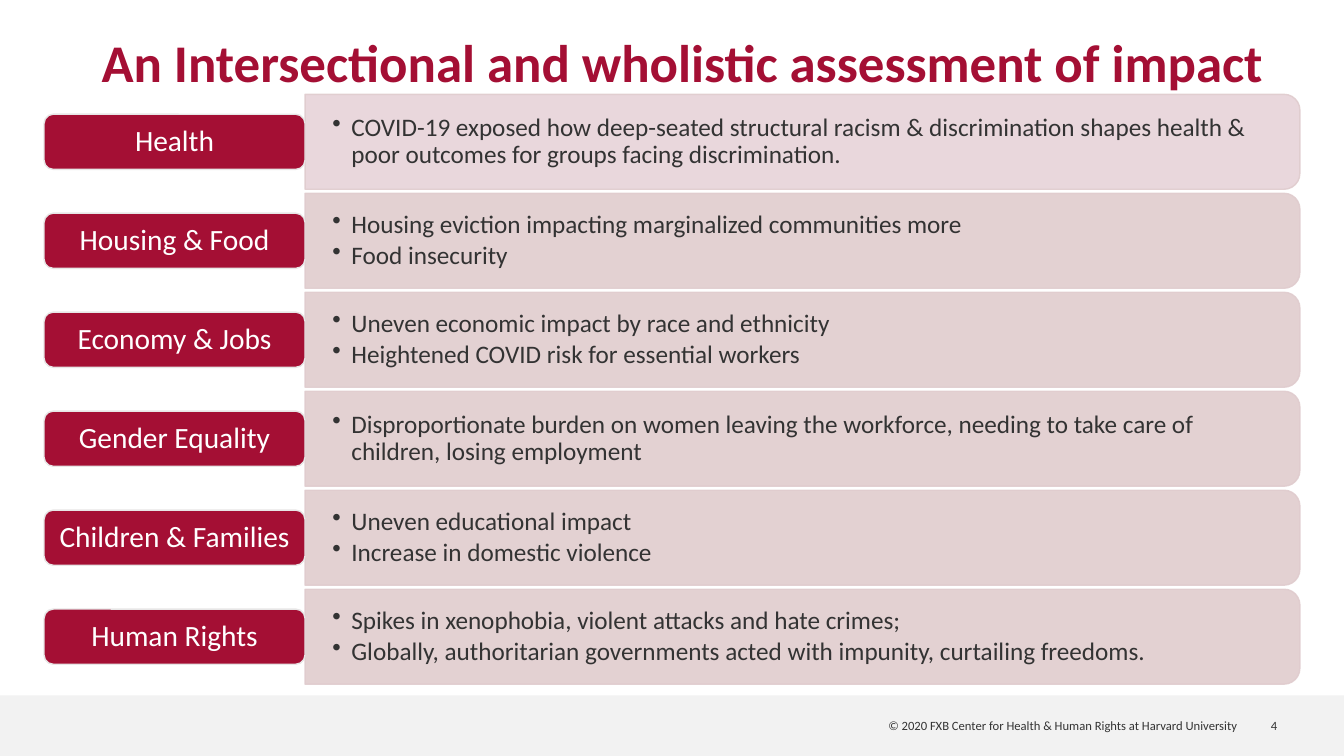
import pptx
import pptx.dml.color
import pptx.enum.shapes
import pptx.enum.text
import pptx.oxml
import pptx.oxml.ns
import pptx.util

Pt = pptx.util.Pt
ALIGN = pptx.enum.text.PP_ALIGN
ANCHOR = pptx.enum.text.MSO_ANCHOR
SHAPE = pptx.enum.shapes.MSO_SHAPE

FONT = "Calibri"
COLORS = {
    "crimson": "A40F34",
    "maroon": "7B0B27",
    "rose": "E0CCCE",
    "edge": "E7E6E6",
    "band": "F2F2F2",
    "text": "333333",
    "white": "FFFFFF",
}

TITLE = "An Intersectional and wholistic assessment of impact"
COPYRIGHT = "© 2020 FXB Center for Health & Human Rights at Harvard University"
IMPACTS = [
    ("Health", [
        "COVID-19 exposed how deep-seated structural racism & discrimination "
        "shapes health & poor outcomes for groups facing discrimination."]),
    ("Housing & Food", [
        "Housing eviction impacting marginalized communities more",
        "Food insecurity"]),
    ("Economy & Jobs", [
        "Uneven economic impact by race and ethnicity",
        "Heightened COVID risk for essential workers"]),
    ("Gender Equality", [
        "Disproportionate burden on women leaving the workforce, needing to "
        "take care of children, losing employment"]),
    ("Children & Families", [
        "Uneven educational impact",
        "Increase in domestic violence"]),
    ("Human Rights", [
        "Spikes in xenophobia, violent attacks and hate crimes;",
        "Globally, authoritarian governments acted with impunity, "
        "curtailing freedoms."]),
]


def rgb(name):
    return pptx.dml.color.RGBColor.from_string(COLORS[name])


def set_frame(frame, anchor, horizontal, vertical):
    frame.word_wrap = True
    frame.auto_size = pptx.enum.text.MSO_AUTO_SIZE.NONE
    frame.vertical_anchor = anchor
    frame.margin_left = frame.margin_right = Pt(horizontal)
    frame.margin_top = frame.margin_bottom = Pt(vertical)


def add_text(paragraph, text, size, color, align, bold=False):
    paragraph.alignment = align
    run = paragraph.add_run()
    run.text = text
    run.font.name = FONT
    run.font.size = Pt(size)
    run.font.bold = bold
    run.font.color.rgb = rgb(color)


def add_filled_shape(slide, kind, box, fill, line=None):
    shape = slide.shapes.add_shape(kind, *map(Pt, box))
    shape.shadow.inherit = False
    shape.fill.solid()
    shape.fill.fore_color.rgb = rgb(fill)
    if line:
        shape.line.color.rgb = rgb(line)
        shape.line.width = Pt(1)
    else:
        shape.line.fill.background()
    return shape


def set_opacity(shape, *percents):
    """Set the opacity of the fill, then of the line."""
    colors = shape._element.spPr.iter(pptx.oxml.ns.qn("a:srgbClr"))
    for color, percent in zip(colors, percents):
        alpha = pptx.oxml.parse_xml(
            f'<a:alpha {pptx.oxml.ns.nsdecls("a")} val="{percent * 1000}"/>')
        color.append(alpha)


def add_bullet(paragraph, indent):
    properties = paragraph._p.get_or_add_pPr()
    properties.set("marL", str(Pt(indent)))
    properties.set("indent", str(-Pt(indent)))
    properties.append(pptx.oxml.parse_xml(
        f'<a:buChar {pptx.oxml.ns.nsdecls("a")} char="•"/>'))


def place_title(slide, box):
    title = slide.shapes.title
    title.left, title.top, title.width, title.height = map(Pt, box)
    set_frame(title.text_frame, ANCHOR.BOTTOM, 7.2, 0)
    paragraph = title.text_frame.paragraphs[0]
    paragraph.line_spacing = 0.9
    add_text(paragraph, TITLE, 37.8, "crimson", ALIGN.CENTER, bold=True)


def add_footer(slide, box):
    left, top, width, height = box
    add_filled_shape(slide, SHAPE.RECTANGLE, box, "band")
    # Copyright line and slide number share one right-aligned style
    for text, start, length in ((COPYRIGHT, 543.6, 347), ("4", 890.6, 28.8)):
        textbox = slide.shapes.add_textbox(
            Pt(left + start), Pt(top), Pt(length), Pt(height))
        set_frame(textbox.text_frame, ANCHOR.MIDDLE, 7.2, 3.6)
        add_text(textbox.text_frame.paragraphs[0], text, 9, "text", ALIGN.RIGHT)


def add_panel(slide, box, bullets, fill, opacity):
    left, top, width, height = box
    # Turned a quarter so that the rounded corners face right
    turned = (left + (width - height) / 2, top - (width - height) / 2,
              height, width)
    panel = add_filled_shape(
        slide, SHAPE.ROUND_2_SAME_RECTANGLE, turned, fill, "rose")
    panel.rotation = 90
    set_opacity(panel, opacity, 90)

    # Upright text over the panel
    textbox = slide.shapes.add_textbox(
        Pt(left), Pt(top + 3.3), Pt(width - 3), Pt(height - 6.6))
    frame = textbox.text_frame
    set_frame(frame, ANCHOR.MIDDLE, 19.6, 9.8)
    for index, text in enumerate(bullets):
        paragraph = frame.add_paragraph() if index else frame.paragraphs[0]
        add_bullet(paragraph, 13.5)
        paragraph.line_spacing = 0.9
        paragraph.space_after = Pt(2.7)
        add_text(paragraph, text, 18, "text", ALIGN.LEFT)


def add_label(slide, box, text):
    label = add_filled_shape(
        slide, SHAPE.ROUNDED_RECTANGLE, box, "crimson", "edge")
    set_frame(label.text_frame, ANCHOR.MIDDLE, 6.5, 3)
    paragraph = label.text_frame.paragraphs[0]
    paragraph.line_spacing = 0.9
    add_text(paragraph, text, 21, "white", ALIGN.CENTER)


def add_impact_rows(slide, box):
    left, top, width, height = box
    label_width, label_height, gap = 186.4, 39.4, 2.9
    row_height = (height - gap * (len(IMPACTS) - 1)) / len(IMPACTS)
    for index, (name, bullets) in enumerate(IMPACTS):
        row_top = top + index * (row_height + gap)
        fill, opacity = ("rose", 90) if index else ("maroon", 16)
        add_panel(slide, (left + label_width, row_top,
                          width - label_width, row_height),
                  bullets, fill, opacity)
        add_label(slide, (left, row_top + (row_height - label_height) / 2,
                          label_width, label_height), name)


def main():
    presentation = pptx.Presentation()
    presentation.slide_width = Pt(960)
    presentation.slide_height = Pt(540)
    slide = presentation.slides.add_slide(presentation.slide_layouts[5])
    add_footer(slide, (0, 496.8, 960, 43.2))
    place_title(slide, (31, 18.7, 913, 48.3))
    add_impact_rows(slide, (31.5, 67.4, 897, 421.3))
    presentation.save("out.pptx")


if __name__ == "__main__":
    main()
